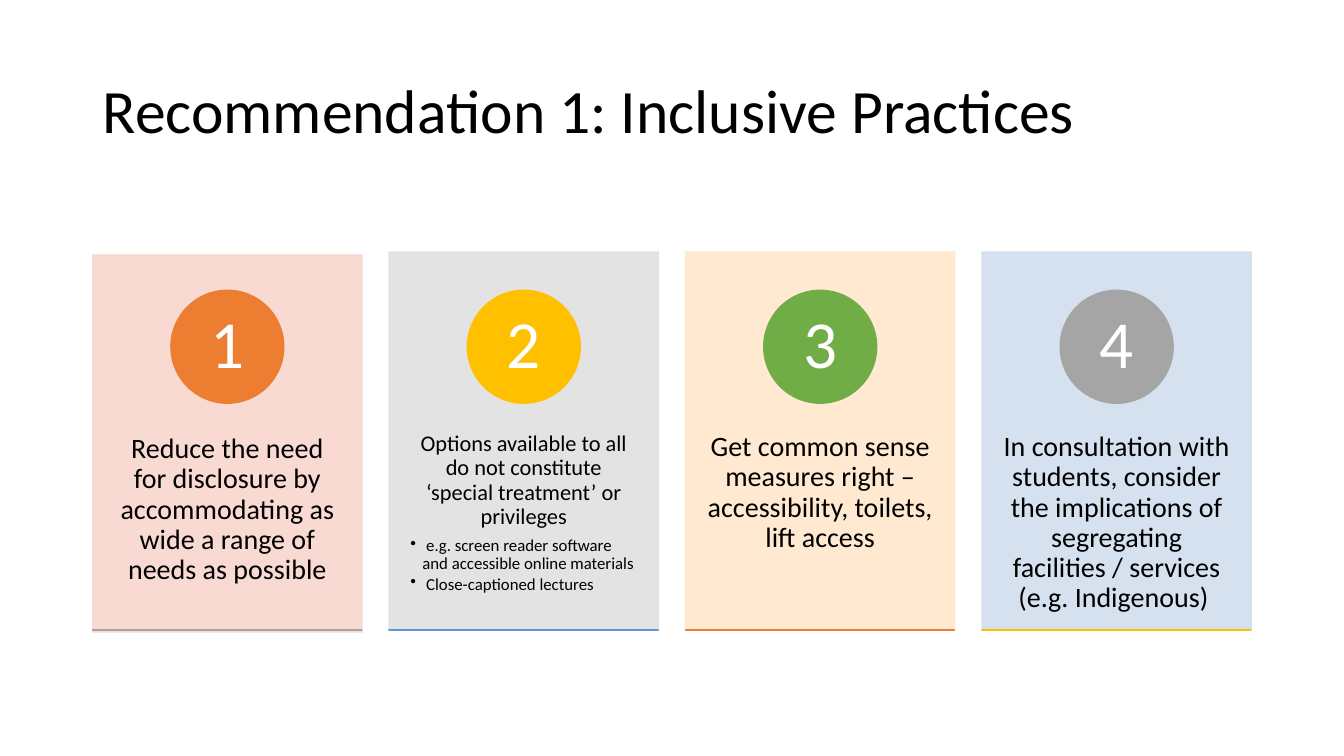
"""Build a slide of four numbered recommendation cards."""
from lxml import etree
from pptx import Presentation
from pptx import util as u
from pptx.dml.color import RGBColor
from pptx.enum import shapes, text
from pptx.oxml.ns import qn

TITLE = "Recommendation 1: Inclusive Practices"
CARDS = [
    dict(body="Reduce the need for disclosure by accommodating as wide a range of needs as possible",
         size=20, card="F8D7CE", circle="ED7D31", rule="A5A5A5", card_top=2.53, body_top=3.95),
    dict(body="Options available to all do not constitute ‘special treatment’ or privileges",
         bullets=[" e.g. screen reader software and accessible online materials",
                  " Close-captioned lectures"],
         size=16, card="E1E1E1", circle="FFC000", rule="5B9BD5"),
    dict(body="Get common sense measures right – accessibility, toilets, lift access",
         size=20, card="FFE8CC", circle="70AD47", rule="ED7D31"),
    dict(body="In consultation with students, consider the implications of segregating "
              "facilities / services (e.g. Indigenous) ",
         size=20, card="D2DEEF", circle="A5A5A5", rule="FFC000"),
]
LEFT, PITCH = 0.92, 2.94
CARD_WIDTH, CARD_HEIGHT = 2.67, 3.74
CARD_TOP, BODY_TOP, BODY_HEIGHT = 2.5, 3.93, 2.25
CIRCLE_TOP, CIRCLE_SIZE = 2.88, 1.12
RULE_TOP, RULE_HEIGHT = 6.25, 0.0001
BULLET_INDENT = 0.12


def set_color(color_format, value):
    color_format.rgb = RGBColor.from_string(value)


def set_values(target, values):
    for name, value in values.items():
        setattr(target, name, value)


def set_frame(frame, horizontal, vertical, anchor):
    set_values(frame, dict(
        word_wrap=True, vertical_anchor=anchor,
        margin_left=u.Inches(horizontal), margin_right=u.Inches(horizontal),
        margin_top=u.Inches(vertical), margin_bottom=u.Inches(vertical)))


def write(paragraph, words, size, color, alignment, space_after=0):
    set_values(paragraph, dict(alignment=alignment, line_spacing=0.9,
                               space_after=u.Pt(space_after)))
    run = paragraph.add_run()
    run.text = words
    set_values(run.font, dict(name="Calibri", size=u.Pt(size)))
    set_color(run.font.color, color)


def add_bullet(paragraph):
    properties = paragraph._p.get_or_add_pPr()
    indent = u.Inches(BULLET_INDENT)
    properties.set("marL", str(indent))
    properties.set("indent", str(-indent))
    etree.SubElement(properties, qn("a:buChar")).set("char", "•")


def add_solid(slide, kind, box, color, opacity=100):
    shape = slide.shapes.add_shape(kind, *map(u.Inches, box))
    shape.shadow.inherit = False
    shape.fill.solid()
    set_color(shape.fill.fore_color, color)
    shape.line.width = u.Pt(1)
    set_color(shape.line.color, color)
    if opacity < 100:
        for element in shape._element.spPr.iter(qn("a:srgbClr")):
            etree.SubElement(element, qn("a:alpha")).set("val", str(opacity * 1000))
    return shape


def add_text(slide, box, horizontal, vertical, anchor):
    frame = slide.shapes.add_textbox(*map(u.Inches, box)).text_frame
    set_frame(frame, horizontal, vertical, anchor)
    return frame


def add_card(slide, number, card):
    left = LEFT + (number - 1) * PITCH
    rectangle, oval = shapes.MSO_SHAPE.RECTANGLE, shapes.MSO_SHAPE.OVAL
    center = text.PP_ALIGN.CENTER
    add_solid(slide, rectangle,
              (left, card.get("card_top", CARD_TOP), CARD_WIDTH, CARD_HEIGHT), card["card"], 90)

    frame = add_text(slide, (left, card.get("body_top", BODY_TOP), CARD_WIDTH, BODY_HEIGHT),
                     0.21, 0.36, text.MSO_ANCHOR.TOP)
    write(frame.paragraphs[0], card["body"], card["size"], "000000", center, card["size"] * 0.35)
    for words in card.get("bullets", []):
        paragraph = frame.add_paragraph()
        paragraph.level = 1
        write(paragraph, words, 12, "000000", text.PP_ALIGN.LEFT, 1.8)
        add_bullet(paragraph)

    circle_left = left + (CARD_WIDTH - CIRCLE_SIZE) / 2
    circle = add_solid(slide, oval, (circle_left, CIRCLE_TOP, CIRCLE_SIZE, CIRCLE_SIZE),
                       card["circle"])
    set_frame(circle.text_frame, 0.09, 0.01, text.MSO_ANCHOR.MIDDLE)
    write(circle.text_frame.paragraphs[0], str(number), 48, "FFFFFF", center)
    add_solid(slide, rectangle, (left, RULE_TOP, CARD_WIDTH, RULE_HEIGHT), card["rule"])


def main():
    presentation = Presentation()
    presentation.slide_width, presentation.slide_height = u.Inches(13.33), u.Inches(7.5)
    slide = presentation.slides.add_slide(presentation.slide_layouts[6])
    title = add_text(slide, (LEFT, 0.4, 11.5, 1.45), 0.1, 0.05, text.MSO_ANCHOR.MIDDLE)
    write(title.paragraphs[0], TITLE, 44, "000000", text.PP_ALIGN.LEFT)
    for number, card in enumerate(CARDS, 1):
        add_card(slide, number, card)
    presentation.save("out.pptx")


if __name__ == "__main__":
    main()
